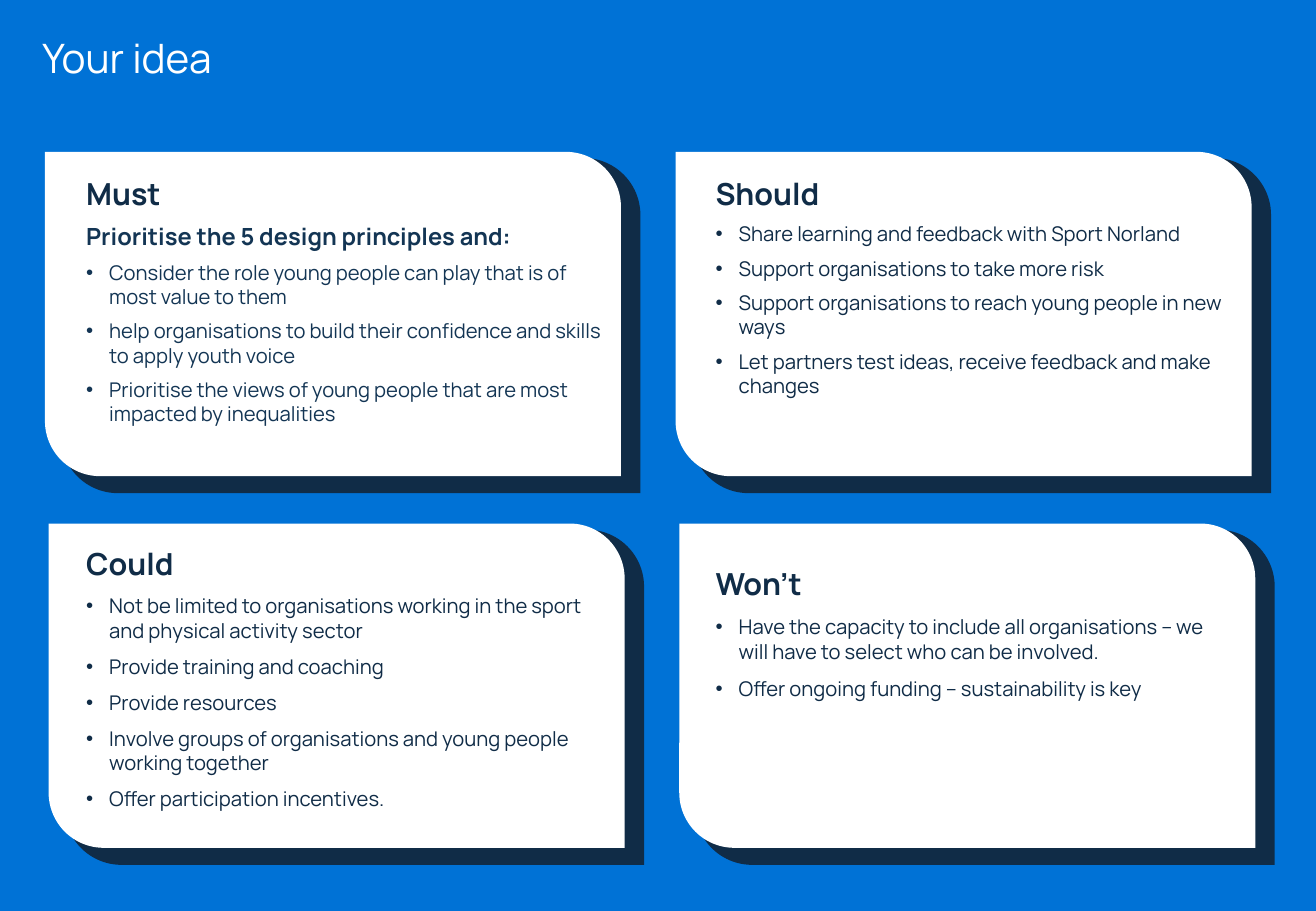
from collections import namedtuple
from dataclasses import dataclass

from lxml.etree import SubElement
from pptx import Presentation
from pptx.dml.color import RGBColor as RGB
from pptx.enum.shapes import MSO_SHAPE as SHAPE
from pptx.enum.text import MSO_AUTO_SIZE as AUTO
from pptx.oxml.ns import qn
from pptx.util import Inches, Pt

WIDTH, HEIGHT = Inches(10.83), Inches(7.5)
Box = namedtuple("Box", "x y w h")
Card = namedtuple("Card", "heading lead bullets gap body_colour inset")


@dataclass(frozen=True)
class Theme:
    blue: str = "0072D6"
    navy: str = "102C47"
    slate: str = "133554"
    white: str = "FFFFFF"
    font: str = "Manrope"
    title: int = 24
    heading: int = 18
    lead: int = 14
    body: int = 12
    indent: float = 0.19
    corner: float = 0.17


T = Theme()

TITLE_BOX = Box(2.31, 2.93, 27.7, 6.67)
GRID = Box(3.42, 16.67, 43.77, 35.6)
COLUMN_STEP, ROW_STEP, ROW_SHIFT = 47.92, 40.8, 0.28
SHADOW = Box(1.2, 0.67, 44.04, 36.8)

CARDS = [
    Card("Must", "Prioritise the 5 design principles and:", [
        "Consider the role young people can play that is of most value to them",
        "help organisations to build their confidence and skills to apply youth voice",
        "Prioritise the views of young people that are most impacted by inequalities",
    ], 6, T.slate, Box(2.22, 1.87, 42.01, 32.93)),
    Card("Should", None, [
        "Share learning and feedback with Sport Norland",
        "Support organisations to take more risk",
        "Support organisations to reach young people in new ways",
        "Let partners test ideas, receive feedback and make changes",
    ], 6, T.navy, Box(2.12, 1.87, 40.9, 26)),
    Card("Could", None, [
        "Not be limited to organisations working in the sport and physical activity sector",
        "Provide training and coaching",
        "Provide resources",
        "Involve groups of organisations and young people working together",
        "Offer participation incentives.",
    ], 7, T.navy, Box(1.94, 1.73, 41, 30.8)),
    Card("Won’t", None, [
        "Have the capacity to include all organisations – we will have to select who can be involved.",
        "Offer ongoing funding – sustainability is key",
    ], 8, T.navy, Box(1.85, 3.87, 40.81, 16.4)),
]


def emu(box):
    return [int(share * size / 100)
            for share, size in zip(box, (WIDTH, HEIGHT, WIDTH, HEIGHT))]


def within(box, inset):
    return Box(box.x + inset.x, box.y + inset.y, inset.w, inset.h)


def add_panel(shapes, box, colour):
    sp = shapes.add_shape(SHAPE.ROUND_2_DIAG_RECTANGLE, *emu(box))
    sp.adjustments[0], sp.adjustments[1] = 0, T.corner
    sp.shadow.inherit = False
    sp.fill.solid()
    sp.fill.fore_color.rgb = RGB.from_string(colour)
    sp.line.fill.background()


def add_text_frame(s, box):
    tf = s.shapes.add_textbox(*emu(box)).text_frame
    tf.word_wrap = True
    tf.auto_size = AUTO.SHAPE_TO_FIT_TEXT
    return tf


def add_run(p, text, size, colour, bold=False):
    r = p.add_run()
    r.text = text
    r.font.name, r.font.size, r.font.bold = T.font, Pt(size), bold
    r.font.color.rgb = RGB.from_string(colour)


def set_bullet(p):
    pPr = p._p.get_or_add_pPr()
    pPr.set("marL", str(Inches(T.indent)))
    pPr.set("indent", str(-Inches(T.indent)))
    SubElement(pPr, qn("a:buFont")).set("typeface", "Arial")
    SubElement(pPr, qn("a:buChar")).set("char", "•")


def add_title(s, box, text):
    add_run(add_text_frame(s, box).paragraphs[0], text, T.title, T.white)


def add_card(s, box, card):
    group = s.shapes.add_group_shape()
    add_panel(group.shapes, within(box, SHADOW), T.navy)
    add_panel(group.shapes, box, T.white)

    tf = add_text_frame(s, within(box, card.inset))
    p = tf.paragraphs[0]
    p.space_after = Pt(card.gap)
    add_run(p, card.heading, T.heading, T.navy, bold=True)
    if card.lead:
        p = tf.add_paragraph()
        p.space_after = Pt(card.gap)
        add_run(p, card.lead, T.lead, card.body_colour, bold=True)
    for text in card.bullets:
        p = tf.add_paragraph()
        p.space_after = Pt(card.gap)
        set_bullet(p)
        add_run(p, text, T.body, card.body_colour)


def add_card_grid(s, box, cards):
    for i, card in enumerate(cards):
        row, col = divmod(i, 2)
        x = box.x + col * COLUMN_STEP + row * ROW_SHIFT
        add_card(s, box._replace(x=x, y=box.y + row * ROW_STEP), card)


def main():
    prs = Presentation()
    prs.slide_width, prs.slide_height = WIDTH, HEIGHT
    s = prs.slides.add_slide(prs.slide_layouts[6])
    s.background.fill.solid()
    s.background.fill.fore_color.rgb = RGB.from_string(T.blue)
    add_card_grid(s, GRID, CARDS)
    add_title(s, TITLE_BOX, "Your idea")
    prs.save("out.pptx")


if __name__ == "__main__":
    main()
